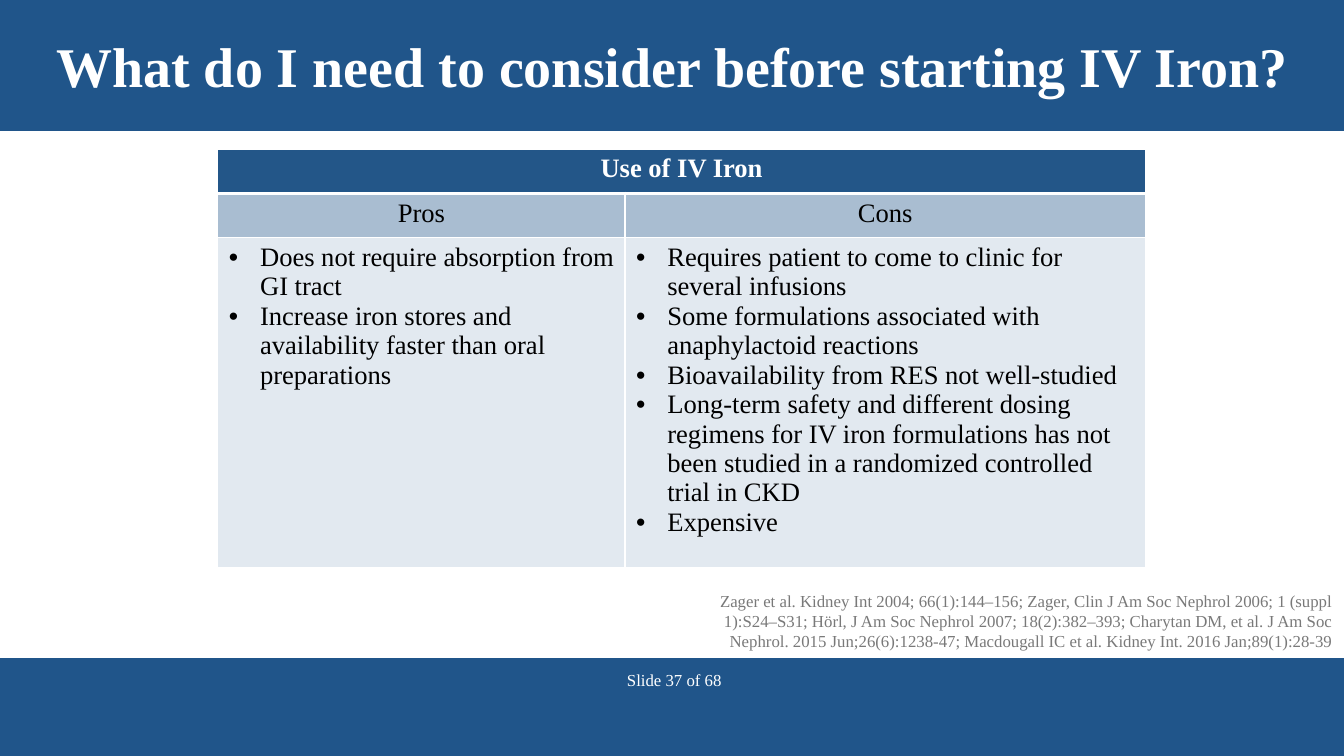
from lxml.etree import SubElement
from pptx import Presentation
from pptx.dml.color import RGBColor
from pptx.enum.shapes import MSO_SHAPE
from pptx.enum.text import MSO_ANCHOR, MSO_AUTO_SIZE, PP_ALIGN
from pptx.oxml import parse_xml
from pptx.oxml.ns import nsdecls, qn
from pptx.util import Inches, Pt

FONT = "Times New Roman"
COLORS = {
    "band": "20558A",
    "header": "235688",
    "subheader": "A9BDD1",
    "body": "E2E9F0",
    "white": "FFFFFF",
    "black": "000000",
    "citation": "797979",
}
SLIDE_WIDTH, SLIDE_HEIGHT = 13.33, 7.5

TITLE = "What do I need to consider before starting IV Iron?"
TABLE_TITLE = "Use of IV Iron"
COLUMNS = {
    "Pros": [
        "Does not require absorption from GI tract",
        "Increase iron stores and availability faster than oral preparations",
    ],
    "Cons": [
        "Requires patient to come to clinic for several infusions",
        "Some formulations associated with anaphylactoid reactions",
        "Bioavailability from RES not well-studied",
        "Long-term safety and different dosing regimens for IV iron formulations "
        "has not been studied in a randomized controlled trial in CKD",
        "Expensive",
    ],
}
CITATION = (
    "Zager et al. Kidney Int 2004; 66(1):144–156; Zager, Clin J Am Soc Nephrol 2006; "
    "1 (suppl 1):S24–S31; Hörl, J Am Soc Nephrol 2007; 18(2):382–393; "
    "Charytan DM, et al. J Am Soc Nephrol. 2015 Jun;26(6):1238-47; "
    "Macdougall IC et al. Kidney Int. 2016 Jan;89(1):28-39"
)


def color(name):
    return RGBColor.from_string(COLORS[name])


def format_paragraph(paragraph, size, color_name, align=PP_ALIGN.LEFT, bold=False):
    paragraph.alignment = align
    font = paragraph.font
    font.name, font.size, font.bold = FONT, Pt(size), bold
    font.color.rgb = color(color_name)


def add_band(slide, left, top, width, height):
    band = slide.shapes.add_shape(
        MSO_SHAPE.RECTANGLE, Inches(left), Inches(top), Inches(width), Inches(height))
    band.shadow.inherit = False
    band.fill.solid()
    band.fill.fore_color.rgb = color("band")
    band.line.fill.background()


def place_title(slide, left, top, width, height):
    """Put the title placeholder in the box, in front of the bands."""
    title = slide.shapes.title
    title.left, title.top = Inches(left), Inches(top)
    title.width, title.height = Inches(width), Inches(height)
    frame = title.text_frame
    frame.text = TITLE
    frame.auto_size = MSO_AUTO_SIZE.NONE
    frame.vertical_anchor = MSO_ANCHOR.MIDDLE
    format_paragraph(frame.paragraphs[0], 40, "white", PP_ALIGN.CENTER, bold=True)
    slide.shapes._spTree.append(title._element)


def add_note(slide, text, color_name, align, left, top, width, height):
    box = slide.shapes.add_textbox(
        Inches(left), Inches(top), Inches(width), Inches(height))
    frame = box.text_frame
    frame.word_wrap = True
    frame.text = text
    format_paragraph(frame.paragraphs[0], 12, color_name, align)


def add_bullet(paragraph):
    properties = paragraph._p.get_or_add_pPr()
    properties.set("marL", str(Inches(0.31)))
    properties.set("indent", str(-Inches(0.31)))
    properties.insert(0, parse_xml(f'<a:buFont {nsdecls("a")} typeface="Arial"/>'))
    properties.insert(1, parse_xml(f'<a:buChar {nsdecls("a")} char="•"/>'))


def set_borders(cell, bottom_width):
    """Draw white borders, which must stand before the fill in the cell's XML."""
    properties = cell._tc.get_or_add_tcPr()
    widths = {"a:lnL": 1, "a:lnR": 1, "a:lnT": 1, "a:lnB": bottom_width}
    for position, (tag, width) in enumerate(widths.items()):
        line = properties.makeelement(qn(tag), {"w": str(Pt(width))})
        fill = SubElement(line, qn("a:solidFill"))
        SubElement(fill, qn("a:srgbClr"), val=COLORS["white"])
        properties.insert(position, line)


def fill_cell(cell, lines, fill_name, color_name="black", align=PP_ALIGN.CENTER,
              bold=False, bulleted=False, bottom_width=1):
    cell.fill.solid()
    cell.fill.fore_color.rgb = color(fill_name)
    cell.margin_left = cell.margin_right = Inches(0.11)
    cell.margin_top = cell.margin_bottom = Inches(0.05)
    set_borders(cell, bottom_width)
    cell.text_frame.text = "\n".join(lines)
    for paragraph in cell.text_frame.paragraphs:
        format_paragraph(paragraph, 19, color_name, align, bold)
        if bulleted:
            add_bullet(paragraph)


def add_comparison_table(slide, left, top, width, height):
    table = slide.shapes.add_table(
        3, len(COLUMNS), Inches(left), Inches(top), Inches(width), Inches(height)).table
    heading_height, pros_width = 0.44, 4.04
    row_heights = [heading_height, heading_height, height - 2 * heading_height]
    for row, row_height in zip(table.rows, row_heights):
        row.height = Inches(row_height)
    for column, column_width in zip(table.columns, [pros_width, width - pros_width]):
        column.width = Inches(column_width)

    table.cell(0, 0).merge(table.cell(0, 1))
    for cell in table.rows[0].cells:
        lines = [TABLE_TITLE] if cell.is_merge_origin else []
        fill_cell(cell, lines, "header", "white", bold=True, bottom_width=3)
    for index, (heading, points) in enumerate(COLUMNS.items()):
        fill_cell(table.cell(1, index), [heading], "subheader")
        fill_cell(table.cell(2, index), points, "body",
                  align=PP_ALIGN.LEFT, bulleted=True)


def main():
    presentation = Presentation()
    presentation.slide_width = Inches(SLIDE_WIDTH)
    presentation.slide_height = Inches(SLIDE_HEIGHT)
    slide = presentation.slides.add_slide(presentation.slide_layouts[5])

    add_band(slide, 0, 0, SLIDE_WIDTH, 1.3)
    add_band(slide, 0, 6.53, SLIDE_WIDTH, SLIDE_HEIGHT - 6.53)
    place_title(slide, 0, 0, SLIDE_WIDTH, 1.3)
    add_note(slide, "Slide 37 of 68", "white", PP_ALIGN.LEFT, 6.12, 6.6, 1.27, 0.3)
    add_comparison_table(slide, 2.16, 1.48, 9.2, 4.15)
    add_note(slide, CITATION, "citation", PP_ALIGN.RIGHT, 6.65, 5.81, 6.67, 0.71)
    presentation.save("out.pptx")


if __name__ == "__main__":
    main()
